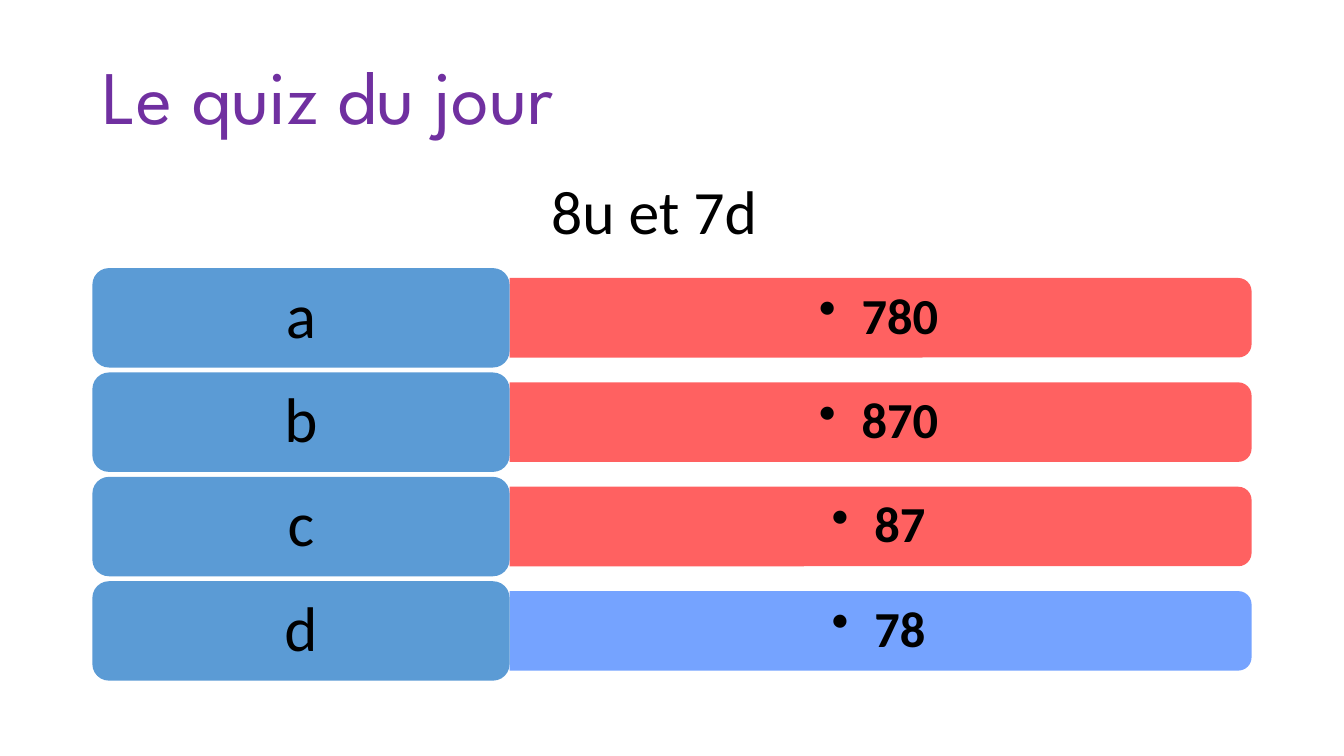
from lxml import etree
from pptx import Presentation
from pptx import util as u
from pptx.dml.color import RGBColor
from pptx.enum import shapes, text
from pptx.oxml import ns

Pt = u.Pt
COLOURS = {"title": "7030A0", "text": "000000", "label": "5B9BD5",
           "red": "FF5050", "blue": "6699FF"}
ANSWERS = [("a", "780", "red"), ("b", "870", "red"),
           ("c", "87", "red"), ("d", "78", "blue")]


def write(shape, words, size, colour, font="Calibri", bold=False,
          align=text.PP_ALIGN.CENTER, spacing=0.9):
    frame = shape.text_frame
    frame.word_wrap = True
    frame.vertical_anchor = text.MSO_ANCHOR.MIDDLE
    paragraph = frame.paragraphs[0]
    paragraph.alignment = align
    paragraph.line_spacing = spacing
    run = paragraph.add_run()
    run.text = words
    run.font.name = font
    run.font.size = Pt(size)
    run.font.bold = bold
    run.font.color.rgb = RGBColor.from_string(COLOURS[colour])
    return paragraph


def add_box(kind, left, top, width, height, colour):
    shape = slide.shapes.add_shape(kind, Pt(left), Pt(top), Pt(width), Pt(height))
    shape.shadow.inherit = False
    shape.fill.solid()
    shape.fill.fore_color.rgb = RGBColor.from_string(COLOURS[colour])
    shape.line.fill.background()
    return shape


presentation = Presentation()
presentation.slide_width, presentation.slide_height = Pt(960), Pt(540)
slide = presentation.slides.add_slide(presentation.slide_layouts[5])

# Title
title = slide.shapes.title
title.left, title.top, title.width, title.height = Pt(66), Pt(19.5), Pt(828), Pt(104.4)
write(title, "Le quiz du jour", 54, "title", "League Spartan",
      align=text.PP_ALIGN.LEFT)
title.text_frame.auto_size = text.MSO_AUTO_SIZE.NONE

# Question
question = slide.shapes.add_textbox(Pt(386.6), Pt(119.5), Pt(196.6), Pt(60.5))
write(question, "8u et 7d", 44, "text", align=text.PP_ALIGN.LEFT, spacing=1.0)

# Answer rows: a label on the left, a bar rounded on its right end
first_top, pitch = 191.5, 74.55
label_left, label_width, label_height = 66, 298, 71
bar_left, bar_length, bar_height = label_left + label_width, 530, 56.8
bullet_indent = Pt(30.5)

for row, (letter, answer, colour) in enumerate(ANSWERS):
    top = first_top + row * pitch
    middle = top + label_height / 2

    # The bar is an upright shape turned by a quarter
    bar = add_box(shapes.MSO_SHAPE.ROUND_2_SAME_RECTANGLE,
                  bar_left + (bar_length - bar_height) / 2, middle - bar_length / 2,
                  bar_height, bar_length, colour)
    bar.rotation = 90
    fill_colour = bar.fill._xPr.find(".//" + ns.qn("a:srgbClr"))
    etree.SubElement(fill_colour, ns.qn("a:alpha"), val="90000")

    # Bulleted answer on the bar
    box = slide.shapes.add_textbox(Pt(bar_left), Pt(middle - 25.6), Pt(527), Pt(51.2))
    frame = box.text_frame
    frame.margin_left = frame.margin_right = Pt(10.8)
    frame.margin_top = frame.margin_bottom = Pt(5.4)
    paragraph = write(box, answer, 36, "text", bold=True)
    properties = paragraph._p.get_or_add_pPr()
    properties.set("marL", str(bullet_indent))
    properties.set("indent", str(-bullet_indent))
    etree.SubElement(properties, ns.qn("a:buChar"), char="•")

    # Letter
    label = add_box(shapes.MSO_SHAPE.ROUNDED_RECTANGLE, label_left, top,
                    label_width, label_height, "label")
    write(label, letter, 45, "text")

presentation.save("out.pptx")
